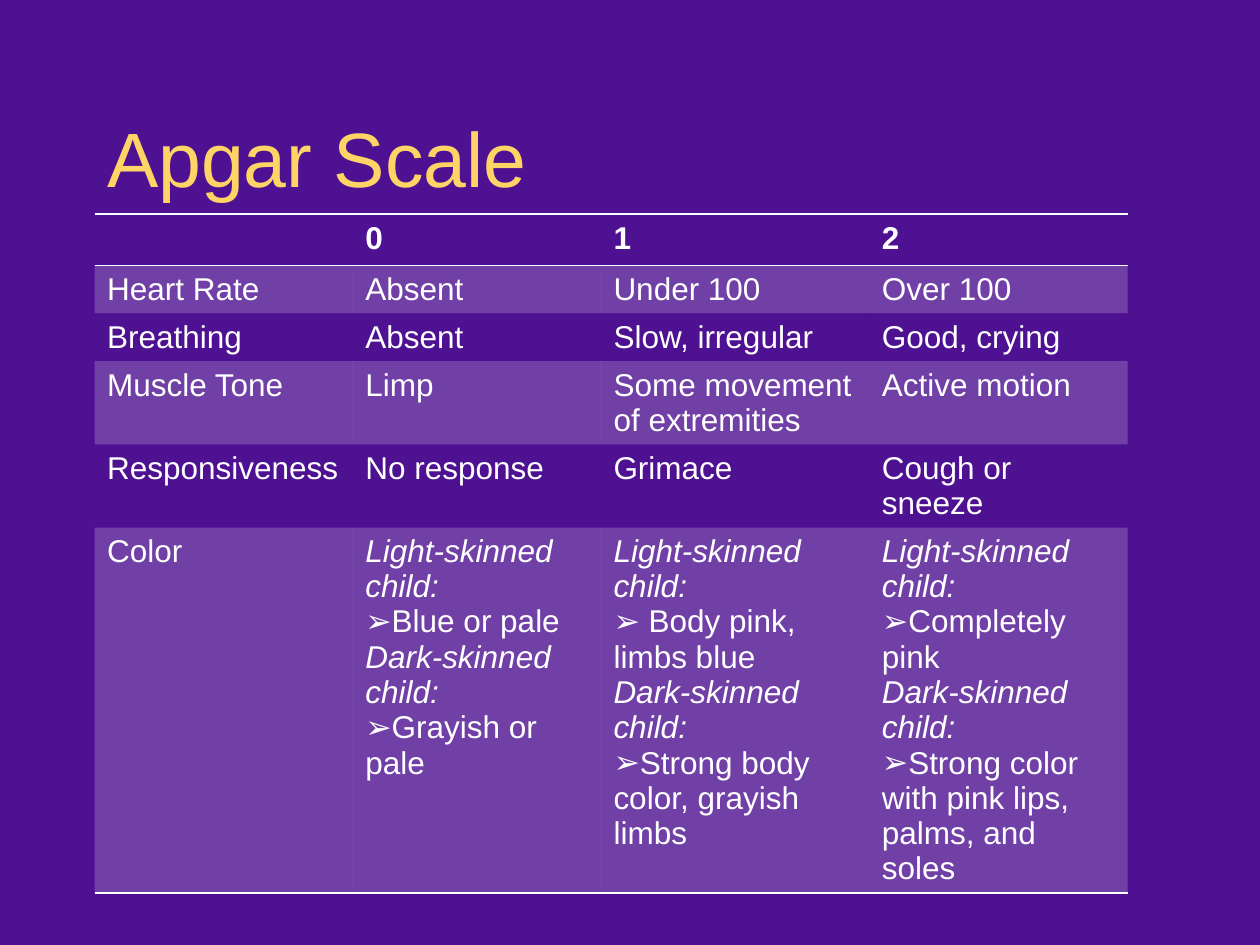
from dataclasses import dataclass

from lxml.etree import SubElement
from pptx import Presentation
from pptx.dml.color import RGBColor
from pptx.enum.text import MSO_ANCHOR, PP_ALIGN
from pptx.oxml import parse_xml
from pptx.oxml.ns import nsdecls, qn
from pptx.util import Inches, Pt

PURPLE = RGBColor(0x4E, 0x11, 0x92)
GOLD = RGBColor(0xFF, 0xD4, 0x67)
WHITE = RGBColor(0xFF, 0xFF, 0xFF)
FONT = "Arial"
PLAIN_TABLE_STYLE = "{2D5ABB26-0587-4C30-8999-92F81FD0307C}"


@dataclass(frozen=True)
class Line:
    text: str
    bold: bool = False
    italic: bool = False
    bullet: bool = False
    lead: str = ""  # italic run ahead of the text


def color_lines(light: str, dark: str, lead: str = "") -> list[Line]:
    """Describe the skin colour signs for one score."""
    return [
        Line("Light-skinned child:", italic=True),
        Line(light, bullet=True, lead=lead),
        Line("Dark-skinned child:", italic=True),
        Line(dark, bullet=True),
    ]


SCORES = ["", "0", "1", "2"]
SIGNS = [
    ["Heart Rate", "Absent", "Under 100", "Over 100"],
    ["Breathing", "Absent", "Slow, irregular", "Good, crying"],
    ["Muscle Tone", "Limp", "Some movement of extremities", "Active motion"],
    ["Responsiveness", "No response", "Grimace", "Cough or sneeze"],
]
COLOR_ROW = [
    [Line("Color")],
    color_lines("Blue or pale", "Grayish or pale"),
    color_lines("Body pink, limbs blue", "Strong body color, grayish limbs", lead=" "),
    color_lines("Completely pink", "Strong color with pink lips, palms, and soles"),
]
ROWS = [
    [[Line(score, bold=True)] for score in SCORES],
    *[[[Line(sign)] for sign in row] for row in SIGNS],
    COLOR_ROW,
]
COLUMN_WIDTHS = [2.05, 1.97, 2.13, 2.05]
ROW_HEIGHTS = [0.38, 0.38, 0.38, 0.66, 0.66, 2.9]


def add_span(para, text: str, size: float, color: RGBColor,
             bold: bool = False, italic: bool = False):
    span = para.add_run()
    span.text = text
    span.font.name = FONT
    span.font.size = Pt(size)
    span.font.color.rgb = color
    span.font.bold = bold
    span.font.italic = italic
    return span


def add_bullet(para) -> None:
    properties = para._p.get_or_add_pPr()
    properties.set("marL", "0")
    properties.set("indent", "0")
    SubElement(properties, qn("a:buFont"), typeface=FONT)
    SubElement(properties, qn("a:buChar"), char="➢")


def write_cell(cell, lines: list[Line]) -> None:
    for index, line in enumerate(lines):
        frame = cell.text_frame
        para = frame.paragraphs[0] if index == 0 else frame.add_paragraph()
        if line.bullet:
            add_bullet(para)
        if line.lead:
            add_span(para, line.lead, 18, WHITE, italic=True)
        if line.text:
            add_span(para, line.text, 18, WHITE, line.bold, line.italic)


def style_cell(cell, shaded: bool, edges: list[str]) -> None:
    """Fill the cell and rule its named edges."""
    if shaded:
        cell.fill.solid()
        cell.fill.fore_color.rgb = WHITE
        SubElement(cell._tc.tcPr.find(".//" + qn("a:srgbClr")),
                   qn("a:alpha"), val="20000")
    else:
        cell.fill.background()
    for position, edge in enumerate(edges):
        border = parse_xml(
            f'<a:{edge} {nsdecls("a")} w="12700"><a:solidFill>'
            f'<a:srgbClr val="{WHITE}"/></a:solidFill></a:{edge}>')
        cell._tc.tcPr.insert(position, border)


def add_title(page, text: str) -> None:
    title = page.shapes.title
    title.left, title.top = Inches(0.75), Inches(0.75)
    title.width, title.height = Inches(8.5), Inches(1.08)
    title.text_frame.vertical_anchor = MSO_ANCHOR.MIDDLE
    para = title.text_frame.paragraphs[0]
    para.alignment = PP_ALIGN.LEFT
    para.line_spacing = 0.9
    span = add_span(para, text, 44, GOLD)
    # Soft text shadow, placed between the colour and the font
    shadow = parse_xml(
        f'<a:effectLst {nsdecls("a")}><a:outerShdw blurRad="38100" dist="38100" '
        'dir="2700000" algn="tl"><a:srgbClr val="000000"><a:alpha val="60000"/>'
        '</a:srgbClr></a:outerShdw></a:effectLst>')
    span.font._element.find(qn("a:solidFill")).addnext(shadow)


def add_scale(page) -> None:
    frame = page.shapes.add_table(
        len(ROWS), len(COLUMN_WIDTHS), Inches(0.75), Inches(1.7),
        Inches(sum(COLUMN_WIDTHS)), Inches(sum(ROW_HEIGHTS)))
    table = frame.table
    table.first_row = table.horz_banding = False
    table._tbl.tblPr.find(qn("a:tableStyleId")).text = PLAIN_TABLE_STYLE
    for column, width in zip(table.columns, COLUMN_WIDTHS):
        column.width = Inches(width)
    for number, (row, height) in enumerate(zip(table.rows, ROW_HEIGHTS)):
        row.height = Inches(height)
        edges = {0: ["lnT", "lnB"], len(ROWS) - 1: ["lnB"]}.get(number, [])
        for cell, lines in zip(row.cells, ROWS[number]):
            write_cell(cell, lines)
            style_cell(cell, number % 2 == 1, edges)


def main() -> None:
    deck = Presentation()
    deck.slide_width, deck.slide_height = Inches(10), Inches(7.5)
    page = deck.slides.add_slide(deck.slide_layouts[5])  # title only
    page.background.fill.solid()
    page.background.fill.fore_color.rgb = PURPLE
    add_title(page, "Apgar Scale")
    add_scale(page)
    deck.save("out.pptx")


if __name__ == "__main__":
    main()
